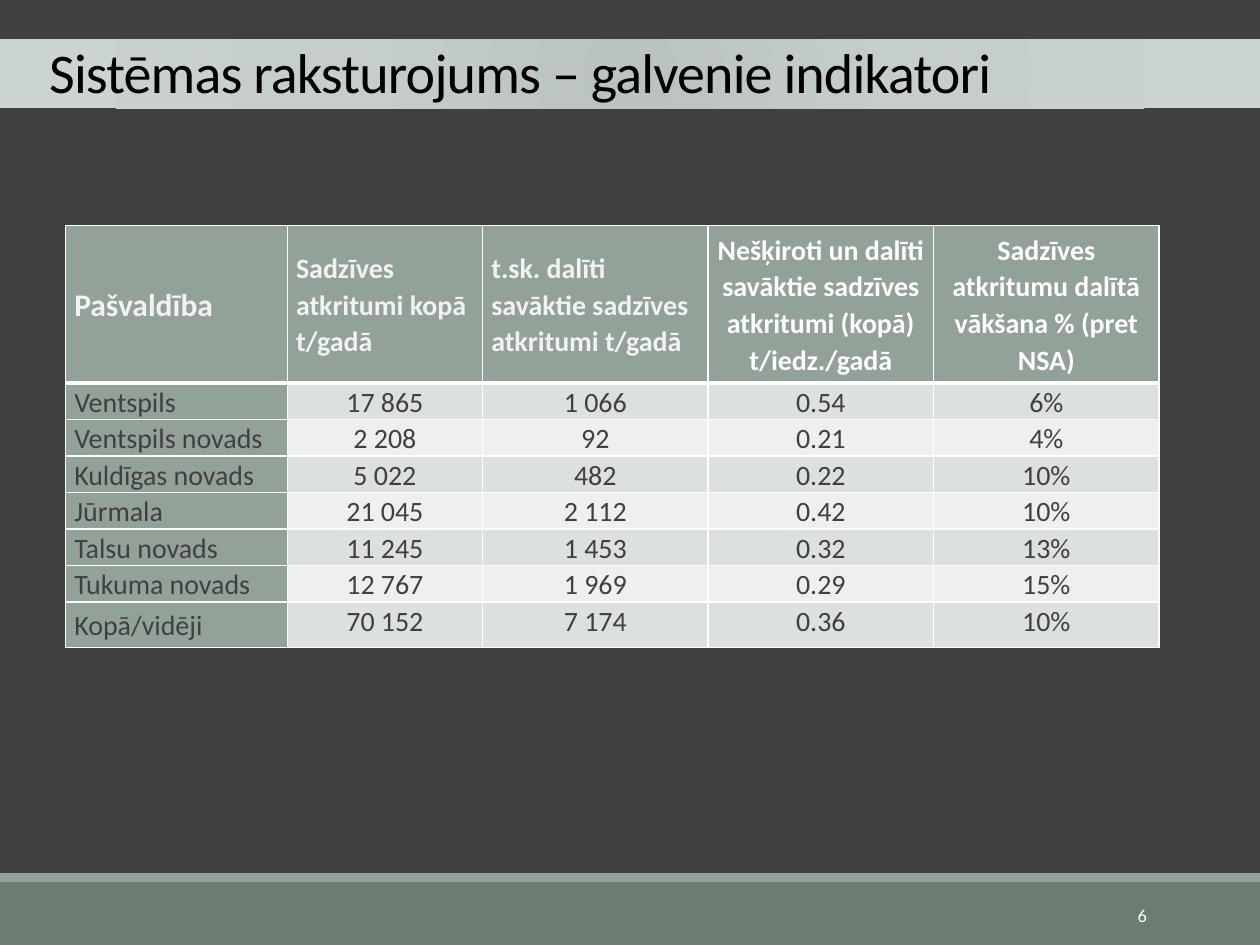
from lxml import etree
from pptx import Presentation
from pptx.dml.color import RGBColor
from pptx.enum.shapes import MSO_SHAPE
from pptx.enum.text import MSO_ANCHOR, MSO_AUTO_SIZE, PP_ALIGN
from pptx.oxml import parse_xml
from pptx.oxml.ns import nsdecls
from pptx.util import Inches, Pt

RECTANGLE = MSO_SHAPE.RECTANGLE
TOP, MIDDLE = MSO_ANCHOR.TOP, MSO_ANCHOR.MIDDLE
LEFT, CENTER, RIGHT, JUSTIFY = PP_ALIGN.LEFT, PP_ALIGN.CENTER, PP_ALIGN.RIGHT, PP_ALIGN.JUSTIFY

FONT = "Calibri"
DARK = RGBColor(0x40, 0x40, 0x40)
GREEN = RGBColor(0x6B, 0x7D, 0x72)
SAGE = RGBColor(0x93, 0xA2, 0x99)
BAND_ODD = RGBColor(0xDC, 0xE0, 0xDE)
BAND_EVEN = RGBColor(0xEE, 0xF0, 0xEF)
OFF_WHITE = RGBColor(0xF2, 0xF2, 0xF2)
WHITE = RGBColor(0xFF, 0xFF, 0xFF)
BLACK = RGBColor(0, 0, 0)
TITLE_STOPS = [(0, RGBColor(0xBA, 0xC3, 0xBE)), (45, RGBColor(0xC6, 0xCE, 0xC9)),
               (100, RGBColor(0xCC, 0xD4, 0xCF))]


def style(paragraph, size, color, align, bold=False):
    paragraph.alignment = align
    font = paragraph.font
    font.name, font.size, font.bold = FONT, Pt(size), bold
    font.color.rgb = color


def add_borders(cell, bottom):
    """White lines on all sides of a cell; they precede the fill in the XML."""
    properties = cell._tc.get_or_add_tcPr()
    for index, (side, width) in enumerate([("L", 1), ("R", 1), ("T", 1), ("B", bottom)]):
        properties.insert(index, parse_xml(
            f'<a:ln{side} {nsdecls("a")} w="{Pt(width)}"><a:solidFill>'
            f'<a:srgbClr val="{WHITE}"/></a:solidFill></a:ln{side}>'))


prs = Presentation()
prs.slide_width, prs.slide_height = Inches(10), Inches(7.5)
slide = prs.slides.add_slide(prs.slide_layouts[5])
slide.background.fill.solid()
slide.background.fill.fore_color.rgb = DARK

# Footer bands
for top, height, color in [(7, 0.5, GREEN), (6.93, 0.07, SAGE)]:
    band = slide.shapes.add_shape(RECTANGLE, 0, Inches(top), prs.slide_width, Inches(height))
    band.shadow.inherit = False
    band.fill.solid()
    band.fill.fore_color.rgb = color
    band.line.fill.background()

# Title on a radial gradient
title = slide.shapes.title
title.left, title.top = 0, Inches(0.31)
title.width, title.height = prs.slide_width, Inches(0.55)
stops = "".join(f'<a:gs pos="{share * 1000}"><a:srgbClr val="{color}"/></a:gs>'
                for share, color in TITLE_STOPS)
title._element.spPr.append(parse_xml(
    f'<a:gradFill {nsdecls("a")} rotWithShape="1"><a:gsLst>{stops}</a:gsLst>'
    '<a:path path="circle"><a:fillToRect l="50000" t="50000" r="50000" b="50000"/></a:path>'
    '</a:gradFill>'))
heading = title.text_frame
heading.text = "Sistēmas raksturojums – galvenie indikatori"
heading.auto_size = MSO_AUTO_SIZE.NONE
heading.vertical_anchor = MIDDLE
heading.margin_left, heading.margin_top = Inches(0.39), Inches(0.12)
heading.margin_right, heading.margin_bottom = Inches(0.1), Inches(0.08)
style(heading.paragraphs[0], 32, BLACK, LEFT)
heading.paragraphs[0].line_spacing = 0.85
heading.paragraphs[0].runs[0].font._element.set("spc", "-50")

# Slide number
number = slide.shapes.add_textbox(Inches(8.12), Inches(7.06), Inches(1.08), Inches(0.4)).text_frame
number.word_wrap = True
number.vertical_anchor = MIDDLE
number.text = "6"
style(number.paragraphs[0], 10.5, WHITE, RIGHT)

# Indicator table
indicators = [
    ("Pašvaldība", "Sadzīves atkritumi kopā t/gadā",
     "t.sk. dalīti savāktie sadzīves atkritumi t/gadā",
     "Nešķiroti un dalīti savāktie sadzīves atkritumi (kopā) t/iedz./gadā",
     "Sadzīves atkritumu dalītā vākšana % (pret NSA)"),
    ("Ventspils", "17 865", "1 066", "0.54", "6%"),
    ("Ventspils novads", "2 208", "92", "0.21", "4%"),
    ("Kuldīgas novads", "5 022", "482", "0.22", "10%"),
    ("Jūrmala", "21 045", "2 112", "0.42", "10%"),
    ("Talsu novads", "11 245", "1 453", "0.32", "13%"),
    ("Tukuma novads", "12 767", "1 969", "0.29", "15%"),
    ("Kopā/vidēji", "70 152", "7 174", "0.36", "10%"),
]
column_widths = [1.76, 1.55, 1.79, 1.79, 1.79]
row_heights = [1.25] + [0.29] * 6 + [0.36]
last_row = len(indicators) - 1
table = slide.shapes.add_table(
    len(row_heights), len(column_widths), Inches(0.52), Inches(1.79),
    Inches(sum(column_widths)), Inches(sum(row_heights))).table
for column, width in zip(table.columns, column_widths):
    column.width = Inches(width)
for row, height in zip(table.rows, row_heights):
    row.height = Inches(height)

for r, values in enumerate(indicators):
    for c, value in enumerate(values):
        cell = table.cell(r, c)
        cell.text = value
        cell.margin_left = cell.margin_right = Inches(0.07)
        cell.margin_top = cell.margin_bottom = 0
        cell.vertical_anchor = TOP if r == last_row and c > 0 else MIDDLE
        cell.fill.solid()
        is_label = r == 0 or c == 0
        cell.fill.fore_color.rgb = SAGE if is_label else BAND_ODD if r % 2 else BAND_EVEN
        add_borders(cell, bottom=3 if r == 0 else 1)
        paragraph = cell.text_frame.paragraphs[0]
        paragraph.line_spacing = 1.07
        if r > 0:
            style(paragraph, 16, DARK, CENTER if c else JUSTIFY)
        elif c < 3:
            style(paragraph, 16 if c else 18, OFF_WHITE, LEFT, bold=True)
        else:
            style(paragraph, 16, WHITE, CENTER, bold=True)
            paragraph.space_after = Pt(8)

prs.save("out.pptx")
